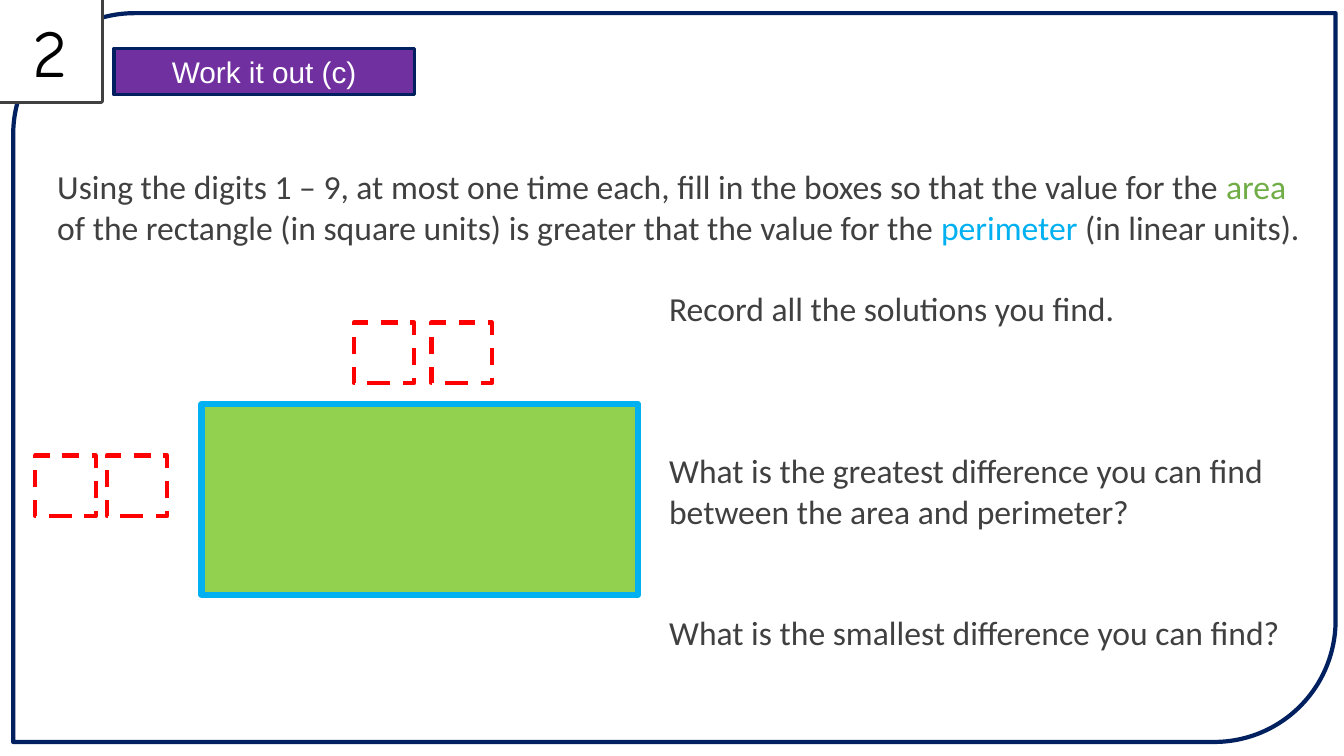
from pptx import Presentation
from pptx.dml.color import RGBColor
from pptx.enum.dml import MSO_LINE
from pptx.enum.shapes import MSO_SHAPE
from pptx.enum.text import MSO_ANCHOR, PP_ALIGN
from pptx.util import Pt

RECT, FRAME = MSO_SHAPE.RECTANGLE, MSO_SHAPE.ROUND_2_DIAG_RECTANGLE
DASH = MSO_LINE.DASH
MIDDLE, CENTER = MSO_ANCHOR.MIDDLE, PP_ALIGN.CENTER
COLORS = {"navy": "002060", "purple": "7030A0", "white": "FFFFFF", "black": "000000",
          "gray": "404040", "green": "70AD47", "blue": "00B0F0", "lime": "92D050", "red": "FF0000"}


def paint(shape, fill=None, line=None, width=1, dash=None):
    shape.shadow.inherit = False
    for part, color in ((shape.fill, fill), (shape.line.fill, line)):
        if color:
            part.solid()
            part.fore_color.rgb = RGBColor.from_string(COLORS[color])
        else:
            part.background()
    if line:
        shape.line.width = Pt(width)
    if dash:
        shape.line.dash_style = dash


def write(paragraph, text, size, font, color):
    run = paragraph.add_run()
    run.text = text
    for key, value in {"size": Pt(size), "name": font}.items():
        setattr(run.font, key, value)
    run.font.color.rgb = RGBColor.from_string(COLORS[color])


deck = Presentation()
deck.slide_width, deck.slide_height = Pt(960), Pt(540)
slide = deck.slides.add_slide(deck.slide_layouts[5])
shapes = slide.shapes

frame = shapes.add_shape(FRAME, Pt(9.4), Pt(9.4), Pt(944.6), Pt(520.6))
paint(frame, line="navy", width=3)

heading = shapes.title
for key, value in {"left": 81.4, "top": 34.6, "width": 214.6, "height": 33.1}.items():
    setattr(heading, key, Pt(value))
paint(heading, "purple", "navy", 2.25)
heading.text_frame.vertical_anchor = MIDDLE
heading.text_frame.paragraphs[0].alignment = CENTER
write(heading.text_frame.paragraphs[0], "Work it out (c)", 21.3, "Arial", "white")

badge_edge = [
    [(0.36, 0.24), (0.59, 0.29), (0.69, 0.25)], [(0.8, 0.21), (0.93, 0.27), (1.13, 0.25)],
    [(1.17, 0.4), (1.12, 0.59), (1.13, 0.68)], [(1.15, 0.77), (1.13, 0.95), (1.13, 1.16)],
    [(1.03, 1.17), (0.9, 1.13), (0.69, 1.16)], [(0.49, 1.2), (0.45, 1.14), (0.22, 1.16)],
    [(0.17, 1.04), (0.23, 0.82), (0.22, 0.72)], [(0.21, 0.62), (0.24, 0.35), (0.22, 0.25)]]
badge_paper = [
    [(0.43, 0.21), (0.57, 0.27), (0.67, 0.25)], [(0.77, 0.24), (0.99, 0.29), (1.13, 0.25)],
    [(1.17, 0.46), (1.08, 0.51), (1.13, 0.73)], [(1.19, 0.94), (1.11, 0.96), (1.13, 1.16)],
    [(0.97, 1.2), (0.82, 1.12), (0.69, 1.16)], [(0.57, 1.2), (0.43, 1.12), (0.22, 1.16)],
    [(0.2, 1.01), (0.25, 0.87), (0.22, 0.73)], [(0.18, 0.59), (0.26, 0.47), (0.22, 0.25)]]
STEPS = 8
for curves, look in ((badge_edge, {"line": "gray", "width": 4.5}), (badge_paper, {"fill": "white"})):
    start = (0.22, 0.25)
    outline = [start]
    for first, second, end in curves:
        for step in range(1, STEPS + 1):
            t = step / STEPS
            outline.append(tuple(
                (1 - t) ** 3 * a + 3 * (1 - t) ** 2 * t * b + 3 * (1 - t) * t ** 2 * c + t ** 3 * d
                for a, b, c, d in zip(start, first, second, end)))
        start = end
    builder = shapes.build_freeform(*outline[0], scale=Pt(72))
    builder.add_line_segments(outline[1:], close=True)
    badge = builder.convert_to_shape()
    paint(badge, **look)

number = badge.text_frame
for key in ("margin_left", "margin_top", "margin_right", "margin_bottom"):
    setattr(number, key, Pt(0))
number.vertical_anchor = MIDDLE
number.paragraphs[0].alignment = CENTER
write(number.paragraphs[0], "2", 48, "Comic Neue", "black")

rectangle = shapes.add_shape(RECT, Pt(144), Pt(288.7), Pt(311.8), Pt(136.1))
paint(rectangle, "lime", "blue", 4.5)
for left, top in ((25.2, 325.4), (76.3, 325.4), (252.7, 230.4), (308.2, 230.4)):
    digit_box = shapes.add_shape(RECT, Pt(left), Pt(top), Pt(43.2), Pt(43.2))
    paint(digit_box, line="red", width=3, dash=DASH)

task = [(0, [
    ("Using the digits 1 – 9, at most one time each, fill in the boxes so that the value for the ", "gray"),
    ("area", "green"),
    (" of the rectangle (in square units) is greater that the value for the ", "gray"),
    ("perimeter", "blue"),
    (" (in linear units).", "gray")])]
questions = [
    (0, [("Record all the solutions you find.", "gray")]),
    (87, [("What is the greatest difference you can find between the area and perimeter?", "gray")]),
    (58, [("What is the smallest difference you can find?", "gray")])]
for area, paragraphs in (((33.8, 115.2, 903.6, 65.5), task), ((470.9, 202.3, 480.2, 269.3), questions)):
    body = shapes.add_textbox(*map(Pt, area)).text_frame
    body.word_wrap = True
    for index, (gap, runs) in enumerate(paragraphs):
        paragraph = body.add_paragraph() if index else body.paragraphs[0]
        if gap:
            paragraph.space_before = Pt(gap)
        for text, color in runs:
            write(paragraph, text, 24, "Calibri", color)

deck.save("out.pptx")
